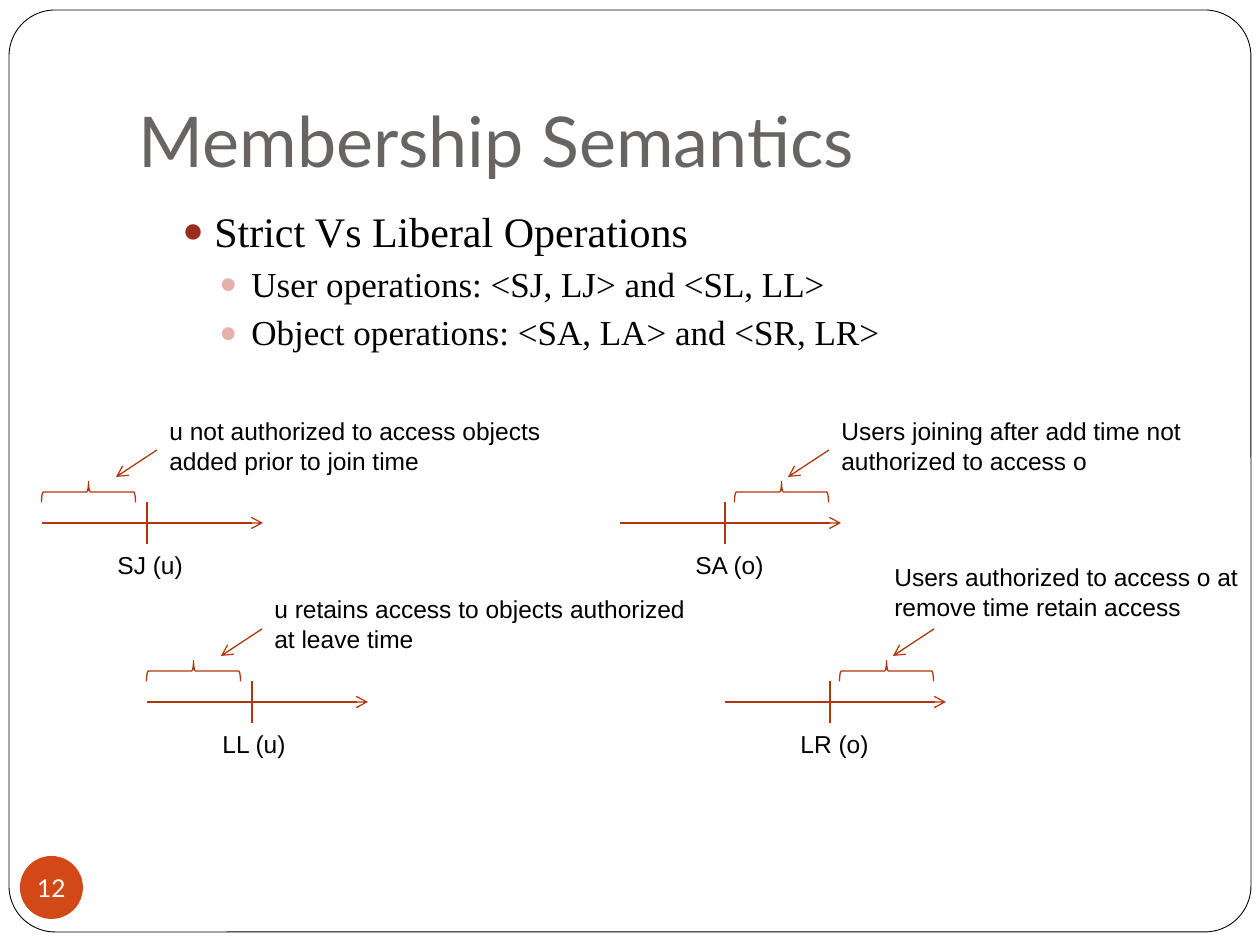
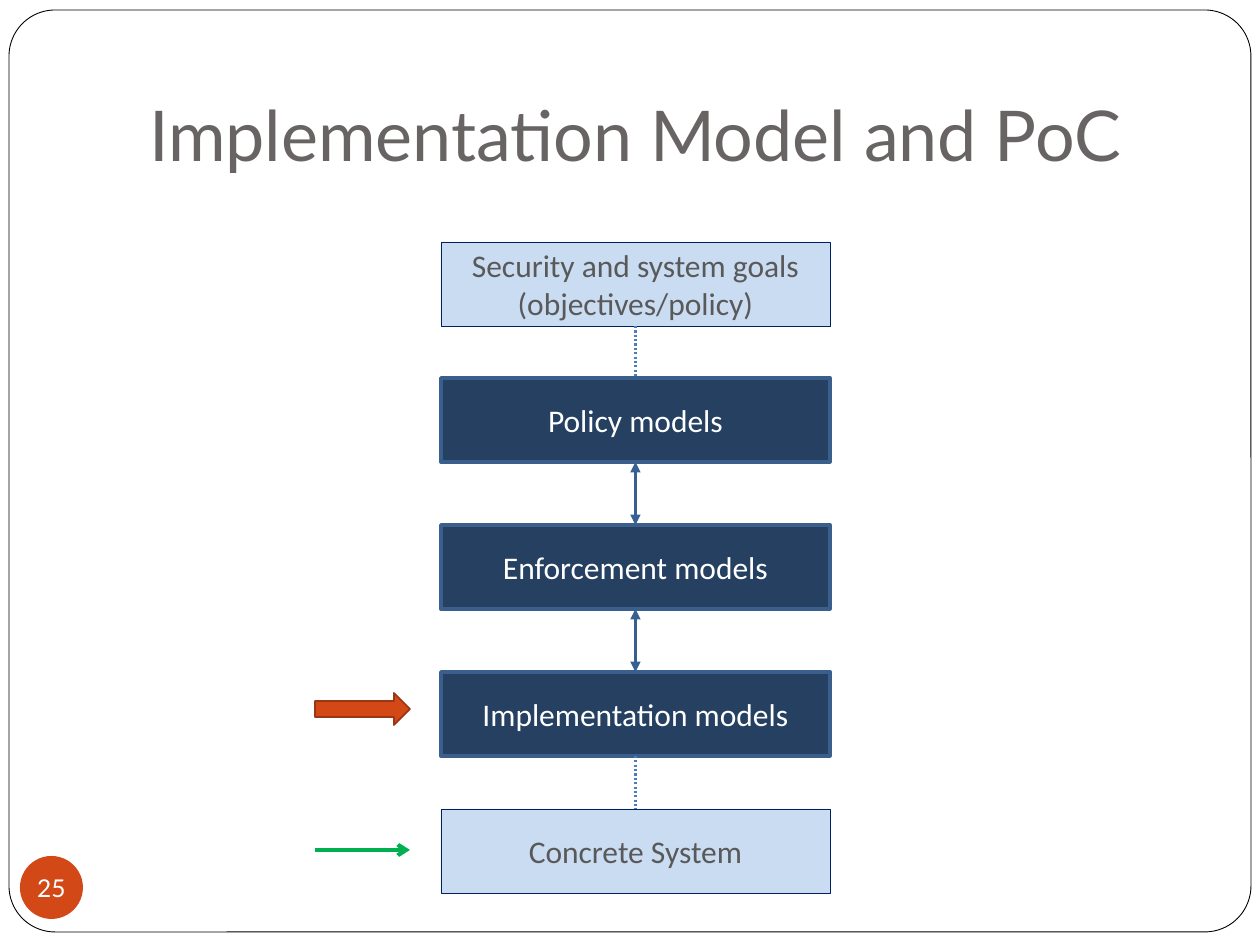
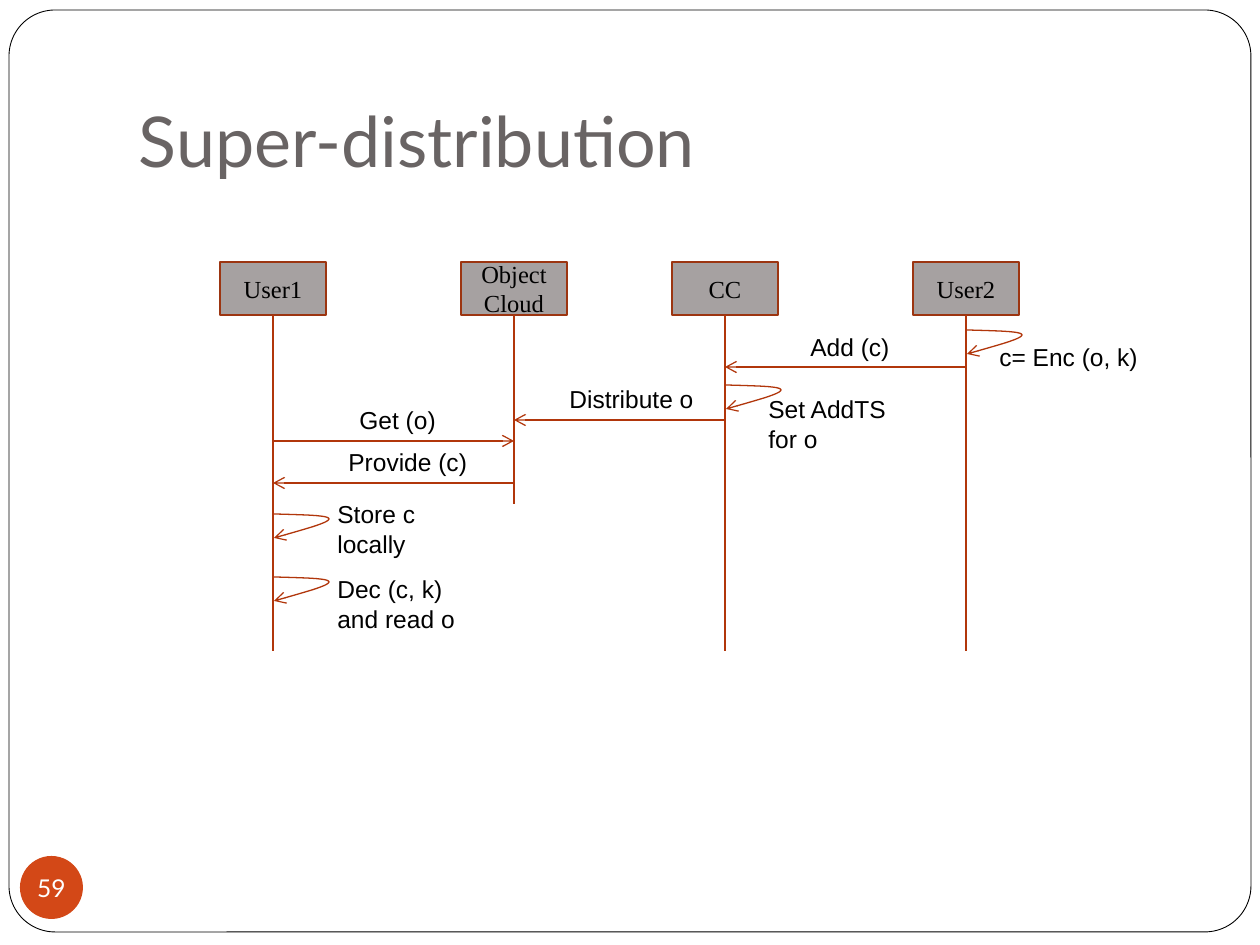
from lxml.etree import SubElement
from pptx import Presentation
from pptx.dml.color import RGBColor
from pptx.enum.dml import MSO_LINE
from pptx.enum.shapes import MSO_CONNECTOR, MSO_SHAPE
from pptx.enum.text import MSO_ANCHOR, MSO_AUTO_SIZE, PP_ALIGN
from pptx.oxml.ns import qn
from pptx.util import Pt

PX = 7257  # EMU per px, 126 px to the inch
RUST, ORANGE, BROWN = "B1360B", "D34817", "9C3511"
GREY, BLACK, WHITE = "696464", "000000", "FFFFFF"
hue = RGBColor.from_string


def box(slide, kind, rect, text="", font="Arial", size=14, ink=BLACK, fill=None, edge=None):
    """Add a preset shape, or a plain text box when kind is None."""
    rect = [v * PX for v in rect]
    if kind is None:
        shape = slide.shapes.add_textbox(*rect)
    else:
        shape = slide.shapes.add_shape(kind, *rect)
        shape.shadow.inherit = False
        shape.line.fill.background()
        if fill:
            shape.fill.solid()
            shape.fill.fore_color.rgb = hue(fill)
        else:
            shape.fill.background()
        if edge:
            shape.line.color.rgb = hue(edge[0])
            shape.line.width = Pt(edge[1])
    if text:
        frame = shape.text_frame
        frame.word_wrap = True
        frame.text = text
        frame.vertical_anchor = MSO_ANCHOR.MIDDLE if kind else MSO_ANCHOR.TOP
        for para in frame.paragraphs:
            para.alignment = PP_ALIGN.CENTER if kind else PP_ALIGN.LEFT
            face = para.runs[0].font
            face.name, face.size, face.color.rgb = font, Pt(size), hue(ink)
    return shape


def stroke(shape, ink=RUST, width=0.75, head=None, tail=None, dash=None):
    """Style a connector or an open curve."""
    shape.line.color.rgb = hue(ink)
    shape.line.width = Pt(width)
    if dash:
        shape.line.dash_style = dash
    for tag, end in (("a:headEnd", head), ("a:tailEnd", tail)):
        if end:
            SubElement(shape.line._get_or_add_ln(), qn(tag), type=end)
    props = shape._element.spPr
    if props.find(qn("a:effectLst")) is None:
        SubElement(props, qn("a:effectLst"))


deck = Presentation()
deck.slide_width, deck.slide_height = 1260 * PX, 945 * PX
layout = deck.slide_layouts[5]

# Titles and page badges
slides = []
for name, page, left, top in [
    ("Membership Semantics", "12", 126, 38),
    ("Implementation Model and PoC", "25", 136, 32),
    ("Super-distribution", "59", 126, 38),
]:
    slide = deck.slides.add_slide(layout)
    slides.append(slide)
    title = slide.shapes.title
    title.left, title.top = left * PX, top * PX
    title.width, title.height = 1071 * PX, 157 * PX
    frame = title.text_frame
    frame.text = name
    frame.word_wrap = True
    frame.auto_size = MSO_AUTO_SIZE.NONE
    frame.vertical_anchor = MSO_ANCHOR.BOTTOM
    frame.margin_left = frame.margin_right = frame.margin_bottom = 13 * PX
    frame.margin_top = 6 * PX
    para = frame.paragraphs[0]
    para.alignment = PP_ALIGN.LEFT
    face = para.runs[0].font
    face.name, face.size, face.color.rgb = "Lato", Pt(40), hue(GREY)

    badge = box(slide, MSO_SHAPE.OVAL, (20, 856, 63, 63), page, "Lato", 14, WHITE, ORANGE)
    frame = badge.text_frame
    frame.word_wrap = False
    frame.margin_left = frame.margin_right = frame.margin_top = frame.margin_bottom = 0

# Rounded page frame, held by the layout
border = box(slides[0], MSO_SHAPE.ROUNDED_RECTANGLE, (9, 10, 1242, 922), fill=WHITE, edge=(BLACK, 0.5))
border.adjustments[0] = 0.05
layout.shapes._spTree.insert(2, border._element)

# Slide 1: bullets
slide = slides[0]
points = [
    ("Strict Vs Liberal Operations", 24, 76, "9B2D1F"),
    ("User operations: <SJ, LJ> and <SL, LL>", 20, 113, "E6B1AB"),
    ("Object operations: <SA, LA> and <SR, LR>", 20, 113, "E6B1AB"),
]
body = box(slide, None, (126, 199, 1071, 189), "\n".join(p[0] for p in points), "Times New Roman")
for para, (_, size, indent, dot) in zip(body.text_frame.paragraphs, points):
    para.space_before = Pt(3.8)
    para.runs[0].font.size = Pt(size)
    props = para._p.get_or_add_pPr()
    props.set("marL", str(indent * PX))
    props.set("indent", str(-32 * PX))
    SubElement(SubElement(props, qn("a:buClr")), qn("a:srgbClr"), val=dot)
    SubElement(props, qn("a:buSzPct"), val="85000")
    SubElement(props, qn("a:buFont"), typeface="Arial")
    SubElement(props, qn("a:buChar"), char="●")

# Slide 1: timelines, with the brace before or after the tick
for x, y, after, label, note, spot in [
    (42, 523, False, "SJ (u)", "u not authorized to access objects added prior to join time", (157, 410, 441, 72)),
    (620, 523, True, "SA (o)", "Users joining after add time not authorized to access o", (829, 410, 378, 72)),
    (147, 702, False, "LL (u)", "u retains access to objects authorized at leave time", (262, 588, 441, 72)),
    (725, 702, True, "LR (o)", "Users authorized to access o at remove time retain access", (882, 556, 378, 72)),
]:
    tip = x + 74 + 94 * after
    for ends, tail in [
        ((x, y, x + 221, y), "arrow"),
        ((x + 105, y - 21, x + 105, y + 21), None),
        ((tip + 41, y - 73, tip, y - 46), "arrow"),
    ]:
        stroke(slide.shapes.add_connector(MSO_CONNECTOR.STRAIGHT, *[v * PX for v in ends]), tail=tail)
    brace = box(slide, MSO_SHAPE.LEFT_BRACE, (x + 36 + 115 * after, y - 78, 21, 94), edge=(RUST, 0.75))
    brace.rotation = 90
    box(slide, None, (x + 63, y + 21, 95, 43), label)
    box(slide, None, spot, note)

# Slide 2: stack of models
slide = slides[1]
pale = dict(ink="595959", fill="CADCF2", edge=("002060", 0.25))
dark = dict(ink=WHITE, fill="254061", edge=("3A5F8C", 2))
stack = []
for top, text, look in [
    (242, "Security and system goals\n(objectives/policy)", pale),
    (378, "Policy models", dark),
    (525, "Enforcement models", dark),
    (672, "Implementation models", dark),
    (809, "Concrete System", pale),
]:
    stack.append(box(slide, MSO_SHAPE.RECTANGLE, (441, top, 389, 84), text, "Calibri", 18, **look))

dots = dict(ink="4A7EBB", width=1.25, dash=MSO_LINE.ROUND_DOT)
both = dict(ink="376092", width=1.75, head="triangle", tail="triangle")
for upper, lower, look in zip(stack, stack[1:], [dots, both, both, dots]):
    link = slide.shapes.add_connector(MSO_CONNECTOR.STRAIGHT, 0, 0, 0, 0)
    link.begin_connect(upper, 2)
    link.end_connect(lower, 0)
    stroke(link, **look)

# Slide 2: markers
box(slide, MSO_SHAPE.RIGHT_ARROW, (315, 693, 95, 32), fill=ORANGE, edge=(BROWN, 1))
mark = slide.shapes.add_connector(MSO_CONNECTOR.STRAIGHT, 315 * PX, 850 * PX, 410 * PX, 850 * PX)
stroke(mark, "00B050", 2.25, tail="arrow")

# Slide 3: actors and lifelines
slide = slides[2]
user1, cloud, centre, user2 = 273, 514, 725, 966
for x, name, end in [
    (user1, "User1", 651),
    (cloud, "Object Cloud", 504),
    (centre, "CC", 651),
    (user2, "User2", 651),
]:
    actor = box(slide, MSO_SHAPE.RECTANGLE, (x - 53, 262, 106, 53), name, "Times New Roman",
                fill="A6A1A1", edge=(BROWN, 1))
    life = slide.shapes.add_connector(MSO_CONNECTOR.STRAIGHT, x * PX, 315 * PX, x * PX, end * PX)
    life.begin_connect(actor, 2)
    stroke(life)

# Slide 3: messages
for start, end, y in [
    (user2, centre, 367),
    (centre, cloud, 420),
    (user1, cloud, 441),
    (cloud, user1, 483),
]:
    call = slide.shapes.add_connector(MSO_CONNECTOR.STRAIGHT, start * PX, y * PX, end * PX, y * PX)
    stroke(call, tail="arrow")

# Slide 3: self calls, each made of two cubic curves
curves = [
    [(0, 0), (28, 1), (56, 1), (56, 5)],
    [(56, 5), (56, 9), (29, 16), (1, 24)],
]
steps = 12
for x, y in [(user2, 330), (centre, 385), (user1, 514), (user1, 577)]:
    dots = []
    for curve in curves:
        for i in range(1, steps + 1):
            t = i / steps
            parts = ((1 - t) ** 3, 3 * t * (1 - t) ** 2, 3 * t * t * (1 - t), t ** 3)
            dx, dy = [sum(k * p[axis] for k, p in zip(parts, curve)) for axis in (0, 1)]
            dots.append((round((x + dx) * PX), round((y + dy) * PX)))
    pen = slide.shapes.build_freeform(x * PX, y * PX)
    pen.add_line_segments(dots, close=False)
    loop = pen.convert_to_shape()
    loop.fill.background()
    stroke(loop, tail="arrow")

# Slide 3: labels
for text, x, y, width, height in [
    ("c= Enc (o, k)", 987, 336, 179, 43),
    ("Add (c)", 798, 326, 105, 43),
    ("Set AddTS for o", 756, 388, 147, 72),
    ("Distribute o", 557, 378, 168, 43),
    ("Get (o)", 347, 399, 105, 43),
    ("Provide (c)", 336, 441, 147, 43),
    ("Store c locally", 325, 493, 147, 72),
    ("Dec (c, k) and read o", 325, 568, 147, 72),
]:
    box(slide, None, (x, y, width, height), text)

deck.save("out.pptx")
